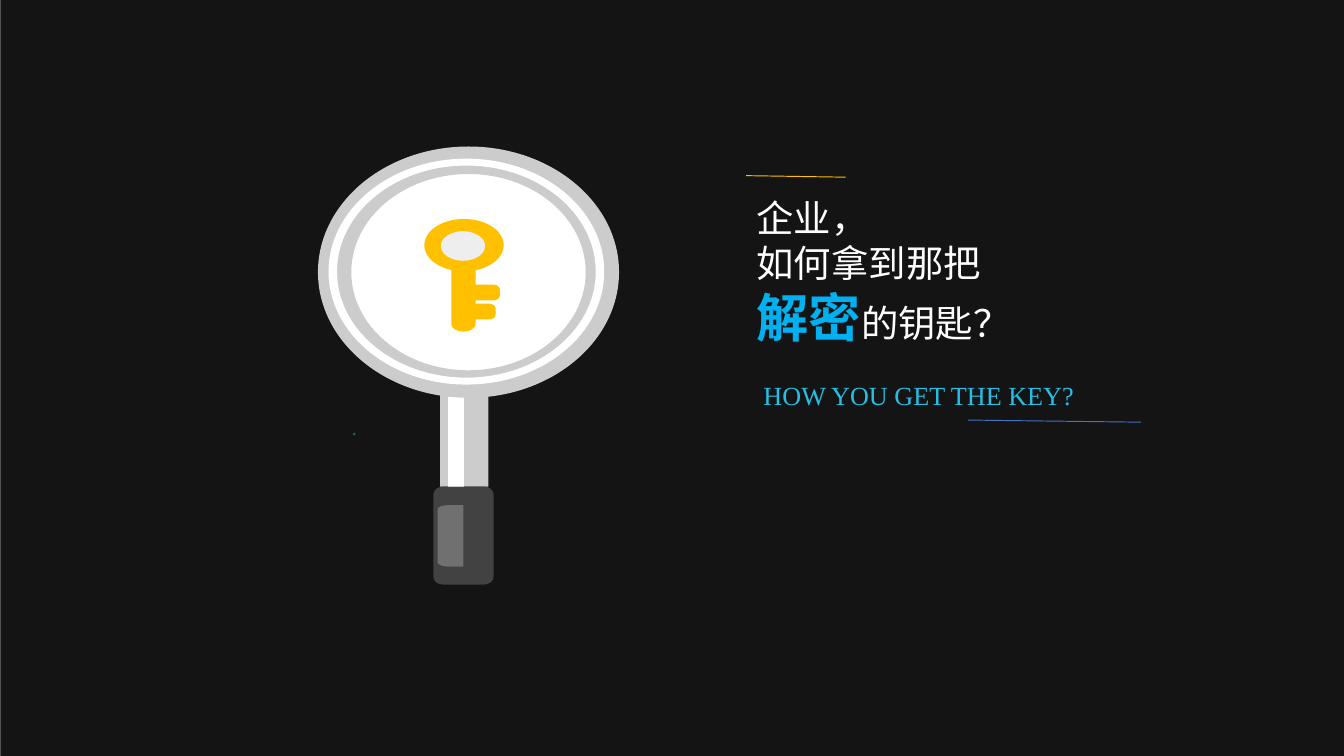
import math

import pptx
import pptx.util
import pptx.dml.color
import pptx.enum.shapes
import pptx.oxml.ns
from lxml import etree

Cm, Pt = pptx.util.Cm, pptx.util.Pt
qn = pptx.oxml.ns.qn
ELLIPSE = pptx.enum.shapes.MSO_SHAPE.OVAL
RECTANGLE = pptx.enum.shapes.MSO_SHAPE.RECTANGLE
COLOURS = {
    "black": "000000", "white": "FFFFFF", "silver": "CCCCCC", "grip": "424242",
    "grip shine": "707070", "gold": "FFC000", "key hole": "EEEEEE",
    "dot": "24575C", "highlight": "00B0F0", "subtitle": "25BEE4", "blue": "4472C4",
}
CJK_FONT = "Noto Sans CJK SC"
CURVE = 0.5523


def rgb(name):
    """Return the named colour."""
    return pptx.dml.color.RGBColor.from_string(COLOURS[name])


def paint(shape, colour):
    """Give a shape a flat fill without line or shadow."""
    shape.shadow.inherit = False
    shape.fill.solid()
    shape.fill.fore_color.rgb = rgb(colour)
    shape.line.fill.background()


def add_part(slide, preset, origin, box, colour):
    """Place a preset shape in a box measured from the origin."""
    left, top, width, height = box
    x, y = origin
    part = slide.shapes.add_shape(preset, Cm(x + left), Cm(y + top), Cm(width), Cm(height))
    paint(part, colour)
    return part


def quarter(centre, radii, start, turn=1):
    """Return start, two control points and end of a quarter ellipse."""
    a = math.radians(start)
    cos, sin = math.cos(a), math.sin(a)
    next_cos, next_sin = -turn * sin, turn * cos
    weights = ((1, 0), (1, CURVE), (CURVE, 1), (0, 1))
    return [(centre[0] + radii[0] * (u * cos + v * next_cos),
             centre[1] + radii[1] * (u * sin + v * next_sin)) for u, v in weights]


def add_outline(slide, origin, contours, colour):
    """Draw contours of lines and curves, given as a start and segments."""
    def place(point):
        return Cm(origin[0] + point[0]), Cm(origin[1] + point[1])

    builder = None
    for start, segments in contours:
        if builder is None:
            builder = slide.shapes.build_freeform(*place(start))
        else:
            builder.move_to(*place(start))
        builder.add_line_segments([place(segment[-1]) for segment in segments], close=True)
    outline = builder.convert_to_shape()
    drawn = [segment for _, segments in contours for segment in segments]
    curves = iter(drawn)
    for step in list(outline._element.iter(qn("a:lnTo"))):
        segment = next(curves, step)
        if segment is step or len(segment) == 1:
            continue
        step.tag = qn("a:cubicBezTo")
        for i, control in enumerate(segment[:-1]):
            x, y = place(control)
            point = etree.Element(qn("a:pt"), x=str(x - outline.left), y=str(y - outline.top))
            step.insert(i, point)
    paint(outline, colour)


def add_ring(slide, origin, box, rim, colour):
    """Draw an elliptical ring whose rim differs across and down."""
    left, top, width, height = box
    centre = (left + width / 2, top + height / 2)
    contours = []
    for inset, turn in (((0, 0), 1), (rim, -1)):
        radii = (width / 2 - inset[0], height / 2 - inset[1])
        quarters = [quarter(centre, radii, turn * 90 * i, turn) for i in range(4)]
        contours.append((quarters[0][0], [points[1:] for points in quarters]))
    add_outline(slide, origin, contours, colour)


def add_rounded(slide, origin, box, radii, colour, corners=(1, 1, 1, 1)):
    """Draw a box with elliptical corners, clockwise from the top left."""
    left, top, width, height = box
    segments = []
    for i, rounded in enumerate(corners):
        at_right, at_bottom = i in (1, 2), i in (2, 3)
        x, y = left + width * at_right, top + height * at_bottom
        if rounded:
            centre = (x - radii[0] if at_right else x + radii[0],
                      y - radii[1] if at_bottom else y + radii[1])
            points = quarter(centre, radii, 180 + 90 * i)
            segments += [points[:1], points[1:]]
        else:
            segments.append([(x, y)])
    add_outline(slide, origin, [(segments[0][0], segments[1:])], colour)


def add_key(slide, left, top):
    """Draw the golden key."""
    origin = (left, top)
    add_part(slide, ELLIPSE, origin, (0, 0, 1.5, 0.99), "gold")
    add_rounded(slide, origin, (0.51, 0.89, 0.46, 1.24), (0.23, 0.15), "gold", (0, 0, 1, 1))
    add_part(slide, ELLIPSE, origin, (0.31, 0.23, 0.84, 0.56), "key hole")
    for tooth_left, tooth_top in ((0.71, 1.6), (0.79, 1.24)):
        add_rounded(slide, origin, (tooth_left, tooth_top, 0.64, 0.3), (0.13, 0.1), "gold")


def add_magnifier(slide, left, top):
    """Draw the magnifying glass with the key in its lens."""
    origin = (left, top)
    add_part(slide, RECTANGLE, origin, (2.31, 4.5, 0.91, 1.93), "silver")
    add_part(slide, ELLIPSE, origin, (0.43, 0.46, 4.65, 3.84), "white")
    add_rounded(slide, origin, (2.18, 6.43, 1.14, 1.85), (0.18, 0.15), "grip")
    add_rounded(slide, origin, (2.26, 6.78, 0.49, 1.16), (0.2, 0.08), "grip shine", (1, 0, 0, 1))
    add_part(slide, RECTANGLE, origin, (2.46, 4.47, 0.3, 1.96), "white")
    add_ring(slide, origin, (0, 0, 5.69, 4.75), (0.63, 0.52), "silver")
    add_ring(slide, origin, (0.2, 0.23, 5.21, 4.27), (0.16, 0.13), "white")
    add_key(slide, left + 2.01, top + 1.37)
    add_part(slide, ELLIPSE, origin, (0.66, 5.41, 0.05, 0.05), "dot")


def add_rule(slide, start, end, colour):
    """Draw a thin line between two points."""
    rule = slide.shapes.add_connector(
        pptx.enum.shapes.MSO_CONNECTOR.STRAIGHT, *map(Cm, start + end))
    rule.line.color.rgb = rgb(colour)
    rule.line.width = Pt(0.5)
    etree.SubElement(rule._element.spPr, qn("a:effectLst"))


def add_question(slide, left, top):
    """Write the question, its English line and the two rules."""
    question = slide.shapes.add_textbox(Cm(left), Cm(top), Cm(6.76), Cm(3.1)).text_frame
    question.word_wrap = True
    question.margin_left = question.margin_right = Cm(0.2)
    question.margin_top = question.margin_bottom = Cm(0.08)
    lines = [
        [("企业，", 20, "white")],
        [("如何拿到那把", 20, "white")],
        [("解密", 28, "highlight"), ("的钥匙？", 20, "white")],
    ]
    for i, words in enumerate(lines):
        paragraph = question.add_paragraph() if i else question.paragraphs[0]
        paragraph.line_spacing = Pt(1.2 * words[0][1])
        for text, size, colour in words:
            run = paragraph.add_run()
            run.text = text
            run.font.size = Pt(size)
            run.font.bold = colour == "highlight"
            run.font.color.rgb = rgb(colour)
            run.font.name = CJK_FONT
            etree.SubElement(run._r.rPr, qn("a:ea"), typeface=CJK_FONT)

    english = slide.shapes.add_textbox(Cm(left + 0.08), Cm(top + 3.43), Cm(6.81), Cm(0.86)).text_frame
    english.word_wrap = True
    paragraph = english.paragraphs[0]
    paragraph.text = "HOW YOU GET THE KEY?"
    paragraph.font.size = Pt(14)
    paragraph.font.name = "Times New Roman"
    paragraph.font.color.rgb = rgb("subtitle")

    add_rule(slide, (left + 4.19, top + 4.33), (left + 7.46, top + 4.37), "blue")
    add_rule(slide, (left, top - 0.29), (left + 1.88, top - 0.26), "gold")


def add_backdrop(slide, width, height):
    """Darken the white page with three translucent layers."""
    for left, opacity in ((0.02, 50), (0.02, 50), (0, 67)):
        veil = add_part(slide, RECTANGLE, (0, 0), (left, 0, width, height), "black")
        colour = veil._element.spPr.find(qn("a:solidFill"))[0]
        etree.SubElement(colour, qn("a:alpha"), val=str(opacity * 1000))


def main():
    """Build the slide and save it."""
    deck = pptx.Presentation()
    width, height = 25.4, 14.29
    deck.slide_width, deck.slide_height = Cm(width), Cm(height)
    slide = deck.slides.add_slide(deck.slide_layouts[6])
    slide.background.fill.solid()
    slide.background.fill.fore_color.rgb = rgb("white")
    add_backdrop(slide, width, height)
    add_magnifier(slide, 6.01, 2.77)
    add_question(slide, 14.1, 3.61)
    deck.save("out.pptx")


if __name__ == "__main__":
    main()
